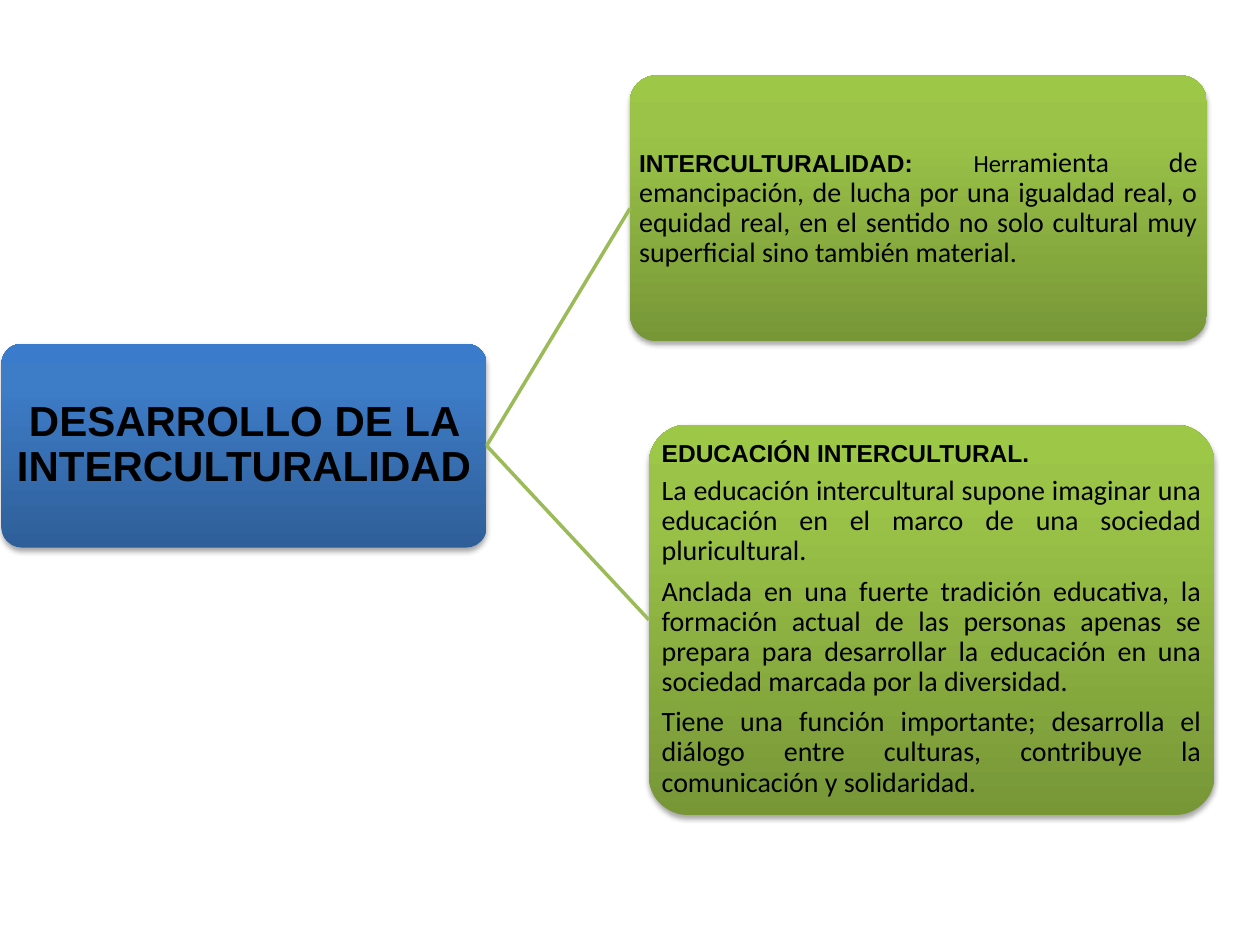
from dataclasses import dataclass

from lxml import etree
from pptx import Presentation
from pptx import util as u
from pptx.dml.color import RGBColor
from pptx.enum import shapes, text
from pptx.oxml import parse_xml
from pptx.oxml.ns import nsdecls, qn

BLACK = RGBColor(0x00, 0x00, 0x00)
BRANCH_GREEN = RGBColor(0x9B, 0xBB, 0x59)
# Gradients run from the bottom of a box to its top, by position in percent.
BLUE_STOPS = {0: RGBColor(0x2F, 0x5F, 0x99), 80: RGBColor(0x3D, 0x7C, 0xC7),
              100: RGBColor(0x3A, 0x7C, 0xCB)}
GREEN_STOPS = {0: RGBColor(0x77, 0x97, 0x37), 80: RGBColor(0x9B, 0xC3, 0x48),
               100: RGBColor(0x9D, 0xC7, 0x46)}
LEFT_SITE, RIGHT_SITE = 1, 3


@dataclass
class Run:
    words: str
    size: float = 16
    font: str = "Calibri"
    bold: bool = False


@dataclass
class Node:
    left: float
    top: float
    width: float
    height: float
    stops: dict[int, RGBColor]
    paragraphs: list[list[Run]]
    align: text.PP_ALIGN = text.PP_ALIGN.JUSTIFY
    margin: float = 0.03


def heading(words: str, size: float = 14) -> Run:
    return Run(words, size, "Arial", True)


ROOT = Node(0.03, 6.93, 9.78, 4.11, BLUE_STOPS,
            [[heading("DESARROLLO DE LA INTERCULTURALIDAD", 24)]],
            text.PP_ALIGN.CENTER, 0.05)
BRANCHES = [
    Node(12.7, 1.52, 11.63, 5.36, GREEN_STOPS, [[
        heading("INTERCULTURALIDAD: "),
        Run("Herra", 14),
        Run("mienta de emancipación, de lucha por una igualdad real, o equidad real, "
            "en el sentido no solo cultural muy superficial sino también material. "),
    ]]),
    Node(13.08, 8.56, 11.4, 7.87, GREEN_STOPS, [
        [heading("EDUCACIÓN INTERCULTURAL. ")],
        [Run("La educación intercultural supone imaginar una educación en el marco "
             "de una sociedad pluricultural.")],
        [Run("Anclada en una fuerte tradición educativa, la formación actual de las "
             "personas apenas se prepara para desarrollar la educación en una "
             "sociedad marcada por la diversidad.")],
        [Run("Tiene una función importante; desarrolla el diálogo entre culturas, "
             "contribuye la comunicación y solidaridad. ")],
    ]),
]


def add_text(paragraph, words: str, *, size: float, font: str, bold: bool,
             color: RGBColor = BLACK) -> None:
    run = paragraph.add_run()
    run.text = words
    run.font.size = u.Pt(size)
    run.font.name = font
    run.font.bold = bold
    run.font.color.rgb = color


def set_gradient(shape, stops: dict[int, RGBColor]) -> None:
    """Fill upwards with any number of stops."""
    shape.fill.gradient()
    shape.fill.gradient_angle = 90
    stop_list = shape.fill._fill._gradFill.find(qn("a:gsLst"))
    for old_stop in list(stop_list):
        stop_list.remove(old_stop)
    for position, color in stops.items():
        stop_list.append(parse_xml(
            f'<a:gs {nsdecls("a")} pos="{position * 1000}">'
            f'<a:srgbClr val="{color}"/></a:gs>'))


def set_shadow(shape) -> None:
    shape.shadow.inherit = False
    effects = shape._element.spPr.find(qn("a:effectLst"))
    effects.append(parse_xml(
        f'<a:outerShdw {nsdecls("a")} blurRad="{u.Pt(3.1)}" dist="{u.Pt(1.8)}" '
        'dir="5400000" rotWithShape="0"><a:srgbClr val="000000">'
        '<a:alpha val="35000"/></a:srgbClr></a:outerShdw>'))


def add_node(slide, node: Node):
    box = slide.shapes.add_shape(
        shapes.MSO_SHAPE.ROUNDED_RECTANGLE, u.Cm(node.left), u.Cm(node.top),
        u.Cm(node.width), u.Cm(node.height))
    box.adjustments[0] = 0.1
    set_gradient(box, node.stops)
    box.line.fill.background()
    set_shadow(box)

    frame = box.text_frame
    frame.word_wrap = True
    frame.vertical_anchor = text.MSO_ANCHOR.MIDDLE
    frame.margin_left = frame.margin_right = u.Cm(node.margin)
    frame.margin_top = frame.margin_bottom = u.Cm(node.margin)
    for index, runs in enumerate(node.paragraphs):
        paragraph = frame.add_paragraph() if index else frame.paragraphs[0]
        paragraph.alignment = node.align
        paragraph.line_spacing = 0.9
        paragraph.space_after = u.Pt(0.35 * runs[-1].size)
        for run in runs:
            add_text(paragraph, run.words, size=run.size, font=run.font, bold=run.bold)
    return box


def add_link(slide, root_box, branch_box) -> None:
    link = slide.shapes.add_connector(shapes.MSO_CONNECTOR.STRAIGHT, 0, 0, 0, 0)
    link.begin_connect(root_box, RIGHT_SITE)
    link.end_connect(branch_box, LEFT_SITE)
    link.line.color.rgb = BRANCH_GREEN
    link.line.width = u.Pt(2)
    etree.SubElement(link._element.spPr, qn("a:effectLst"))


def main() -> None:
    deck = Presentation()
    deck.slide_width, deck.slide_height = u.Cm(25.4), u.Cm(19.05)
    slide = deck.slides.add_slide(deck.slide_layouts[6])
    root_box = add_node(slide, ROOT)
    for branch in BRANCHES:
        add_link(slide, root_box, add_node(slide, branch))
    deck.save("out.pptx")


if __name__ == "__main__":
    main()
